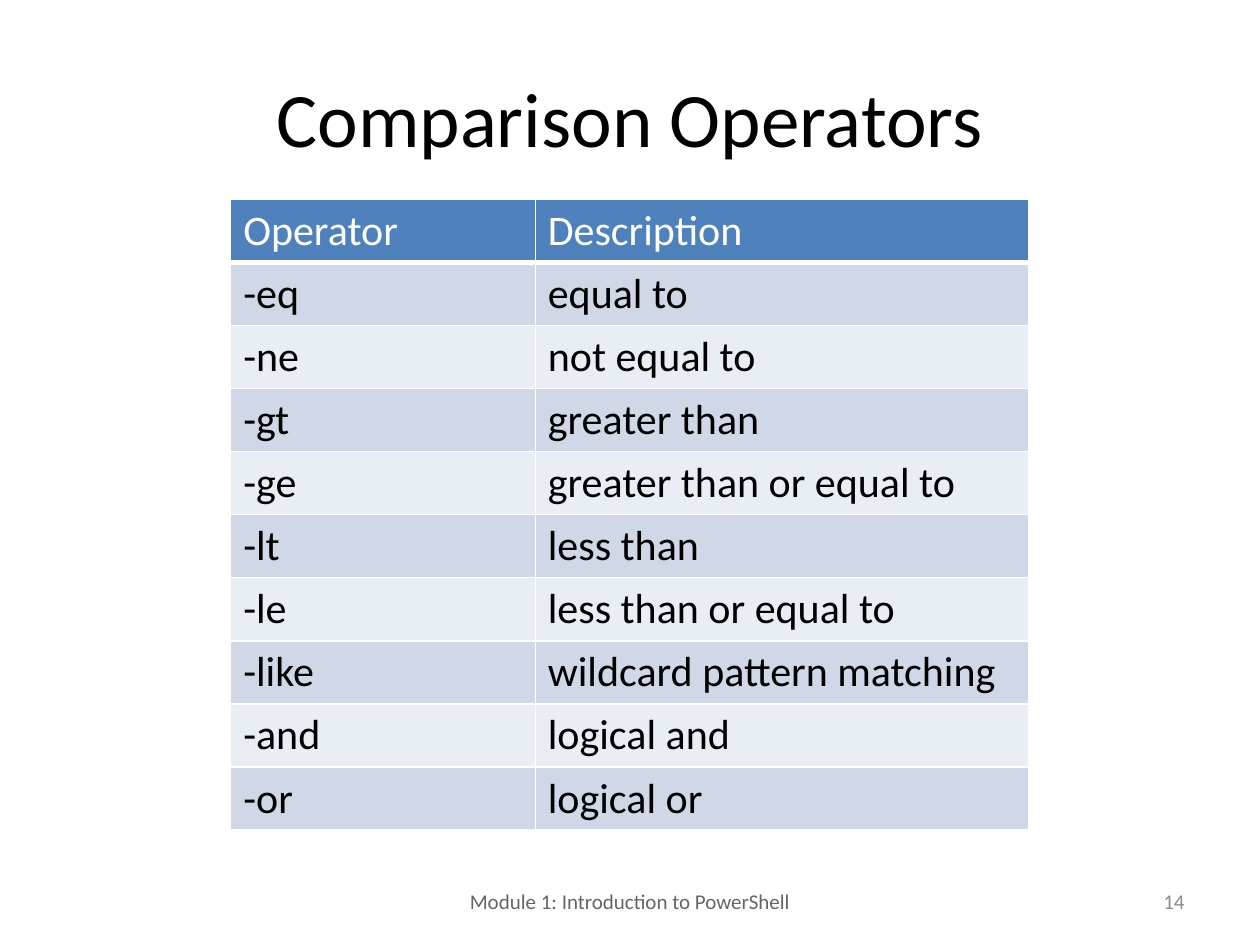
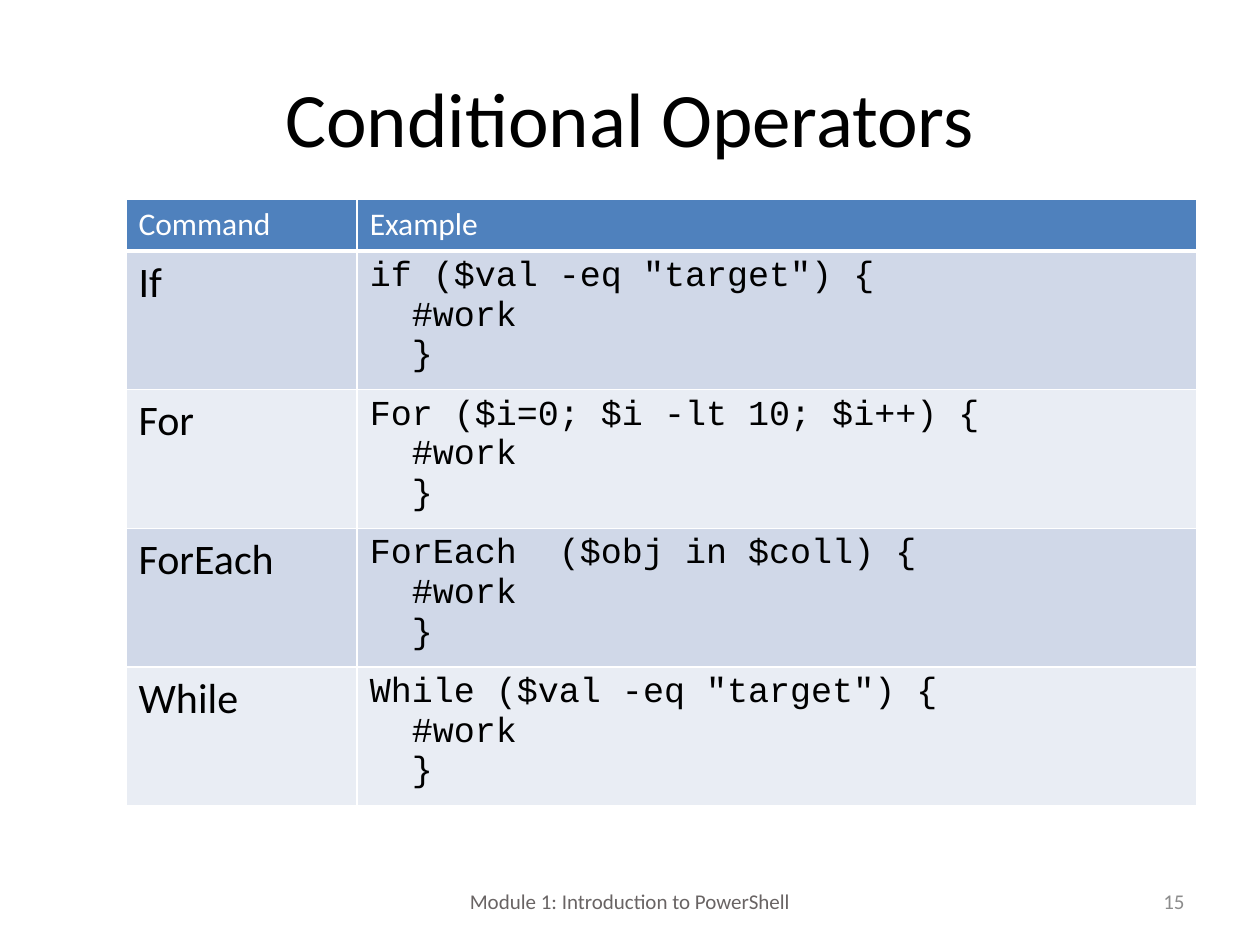
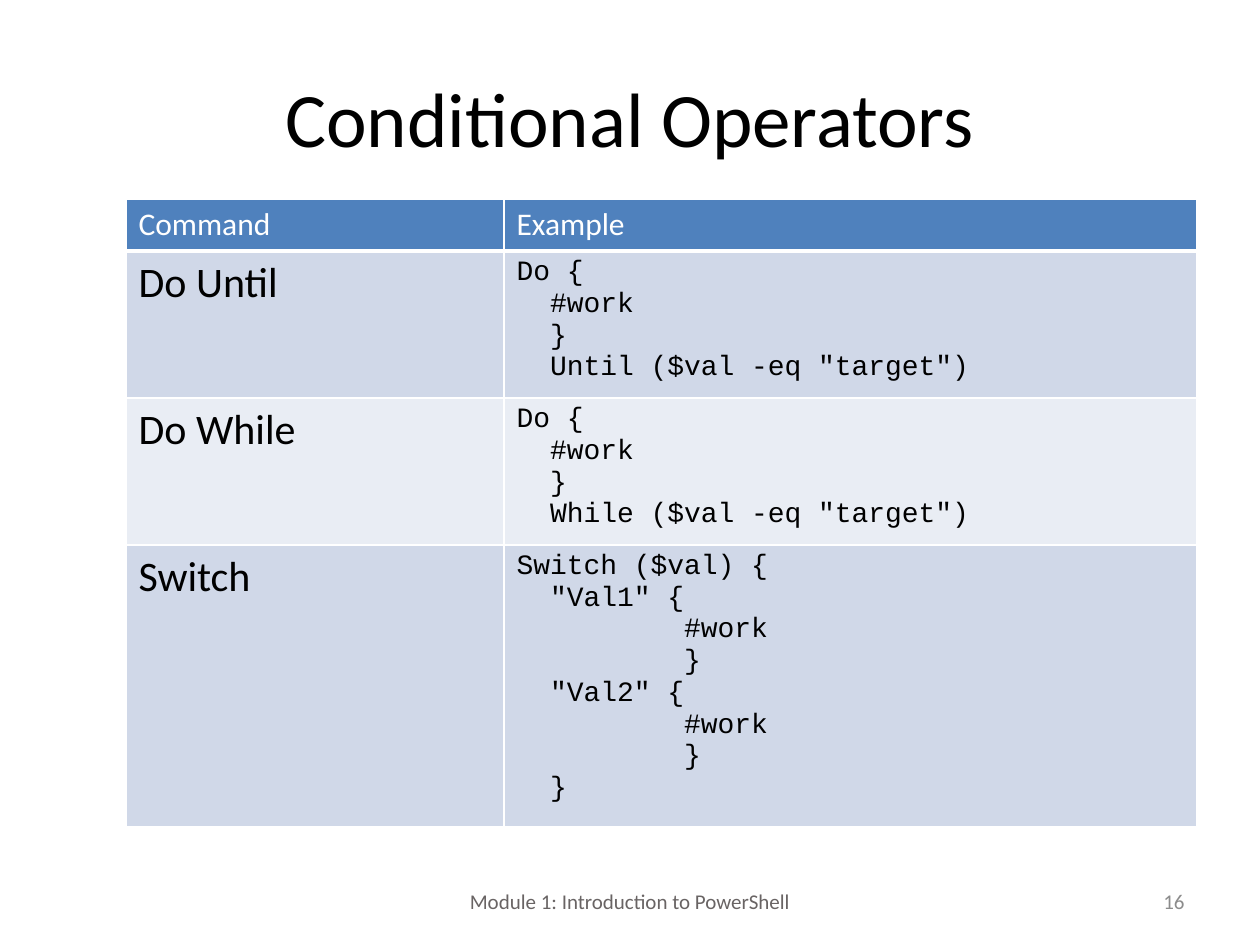
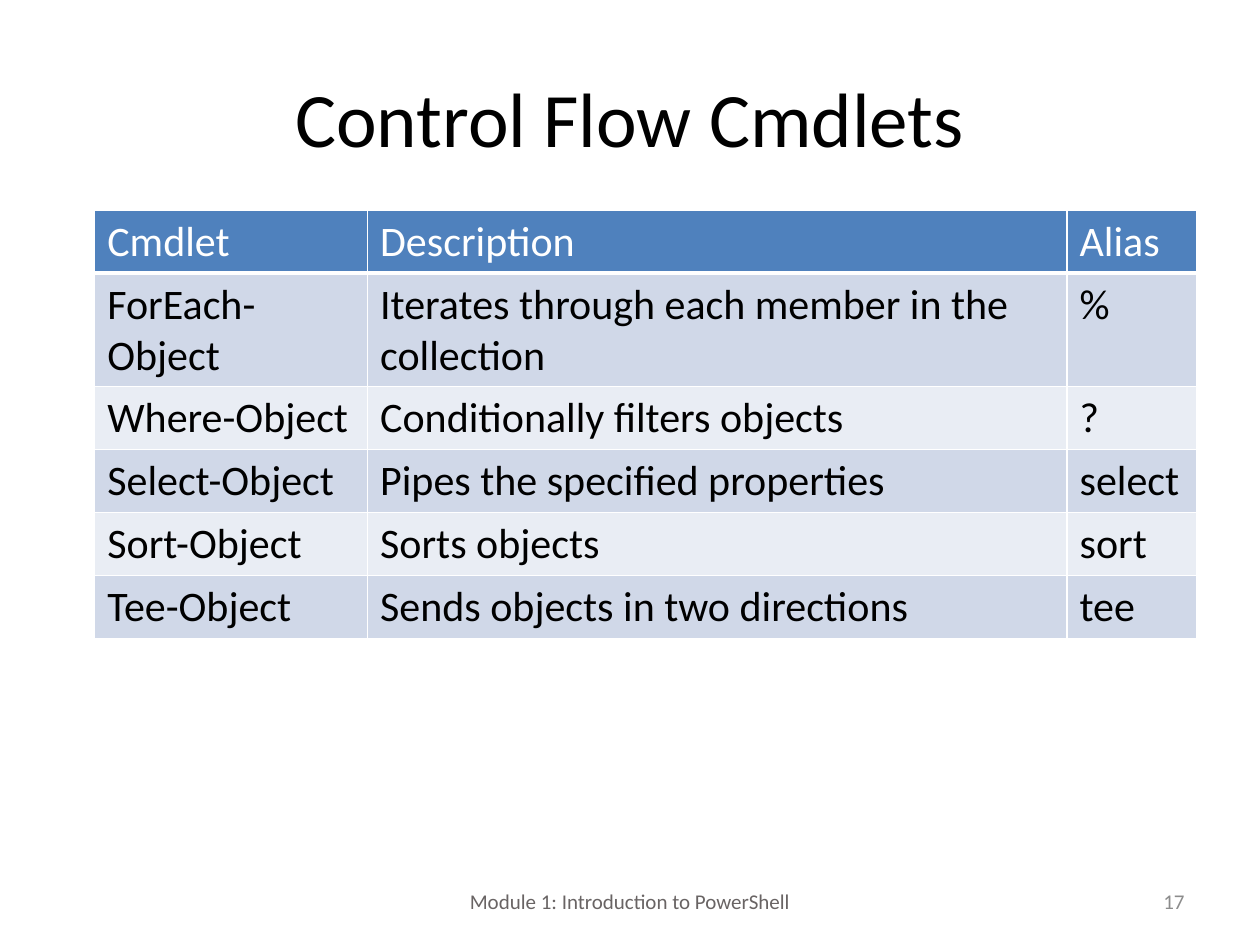
from lxml.etree import SubElement
from pptx import Presentation
from pptx.dml.color import RGBColor as RGB
from pptx.enum.text import MSO_ANCHOR as Anchor, PP_ALIGN as Align
from pptx.oxml.ns import qn
from pptx.util import Cm, Pt

# Shared style
COLORS = {
    "title": "000000", "footer": "696464", "number": "8C8C8C",
    "header": "4F81BD", "header_text": "FFFFFF", "body_text": "000000",
    "band_dark": "D0D8E8", "band_light": "E9EDF4", "border": "FFFFFF",
}
FONT, CODE_FONT = "Calibri", "Courier New"
BODY_SIZE = 24
FOOTER = "Module 1: Introduction to PowerShell"
FIRST_NUMBER = 14
ROW_HEIGHT = 1.04

# Content: sizes in points, positions and column widths in centimetres
SLIDES = [
    {
        "title": "Comparison Operators",
        "at": (4.65, 4.02), "cols": (6.14, 9.95), "header_size": 24,
        "rows": [
            ("Operator", "Description"),
            ("-eq", "equal to"),
            ("-ne", "not equal to"),
            ("-gt", "greater than"),
            ("-ge", "greater than or equal to"),
            ("-lt", "less than"),
            ("-le", "less than or equal to"),
            ("-like", "wildcard pattern matching"),
            ("-and", "logical and"),
            ("-or", "logical or"),
        ],
    },
    {
        "title": "Conditional Operators",
        "at": (2.54, 4.02), "cols": (4.66, 16.93), "header_size": 18,
        "code_size": 20,
        "rows": [
            ("Command", "Example"),
            ("If", 'if ($val -eq "target") {\n  #work\n  }'),
            ("For", "For ($i=0; $i -lt 10; $i++) {\n  #work\n  }"),
            ("ForEach", "ForEach  ($obj in $coll) {\n  #work\n  }"),
            ("While", 'While ($val -eq "target") {\n  #work\n  }'),
        ],
    },
    {
        "title": "Conditional Operators",
        "at": (2.54, 4.02), "cols": (7.62, 13.97), "header_size": 18,
        "code_size": 16,
        "rows": [
            ("Command", "Example"),
            ("Do Until", 'Do {\n  #work\n  }\n  Until ($val -eq "target")'),
            ("Do While", 'Do {\n  #work\n  }\n  While ($val -eq "target")'),
            ("Switch", """Switch ($val) {
  "Val1" {
          #work
          }
  "Val2" {
          #work
          }
  }"""),
        ],
    },
    {
        "title": "Control Flow Cmdlets",
        "at": (1.91, 4.23), "cols": (5.5, 14.1, 2.62), "header_size": 24,
        "rows": [
            ("Cmdlet", "Description", "Alias"),
            ("ForEach-Object", "Iterates through each member in the collection", "%"),
            ("Where-Object", "Conditionally filters objects", "?"),
            ("Select-Object", "Pipes the specified properties", "select"),
            ("Sort-Object", "Sorts objects", "sort"),
            ("Tee-Object", "Sends objects in two directions", "tee"),
        ],
    },
]


def write(tf, text, size, color, font=FONT, align=Align.LEFT):
    tf.text = text
    for p in tf.paragraphs:
        p.alignment = align
        for r in p.runs:
            r.font.name, r.font.size, r.font.bold = font, Pt(size), False
            r.font.color.rgb = RGB.from_string(COLORS[color])


def add_label(s, box, text, size, color, align):
    sp = s.shapes.add_textbox(*map(Cm, box))
    tf = sp.text_frame
    tf.word_wrap = True
    tf.vertical_anchor = Anchor.MIDDLE
    write(tf, text, size, color, align=align)


def set_borders(cell, bottom):
    """Line elements must come before the fill in the cell properties."""
    tc_pr = cell._tc.get_or_add_tcPr()
    for i, (side, width) in enumerate(zip("LRTB", (1, 1, 1, bottom))):
        ln = SubElement(tc_pr, qn(f"a:ln{side}"), w=str(Pt(width)))
        fill = SubElement(ln, qn("a:solidFill"))
        SubElement(fill, qn("a:srgbClr"), val=COLORS["border"])
        tc_pr.insert(i, ln)


def add_grid(s, spec_):
    rows, cols = spec_["rows"], spec_["cols"]
    left, top = spec_["at"]
    table = s.shapes.add_table(len(rows), len(cols), Cm(left), Cm(top),
                               Cm(sum(cols)), Cm(ROW_HEIGHT * len(rows))).table
    for column, width in zip(table.columns, cols):
        column.width = Cm(width)
    for i, row in enumerate(rows):
        for j, text in enumerate(row):
            cell = table.cell(i, j)
            size, font, color = BODY_SIZE, FONT, "body_text"
            band = "band_dark" if i % 2 else "band_light"
            if i == 0:
                size, color, band = spec_["header_size"], "header_text", "header"
            elif j == 1 and "code_size" in spec_:
                size, font = spec_["code_size"], CODE_FONT
            write(cell.text_frame, text, size, color, font)
            cell.fill.solid()
            cell.fill.fore_color.rgb = RGB.from_string(COLORS[band])
            set_borders(cell, bottom=1 if i else 3)


def main():
    prs = Presentation()
    prs.slide_width, prs.slide_height = Cm(25.4), Cm(19.05)
    for number, content in enumerate(SLIDES, FIRST_NUMBER):
        s = prs.slides.add_slide(prs.slide_layouts[6])
        # Title, footer and slide number
        add_label(s, (1.27, 0.76, 22.86, 3.18), content["title"], 44, "title", Align.CENTER)
        add_label(s, (8.68, 17.66, 8.04, 1.01), FOOTER, 12, "footer", Align.CENTER)
        add_label(s, (18.2, 17.66, 5.93, 1.01), str(number), 12, "number", Align.RIGHT)
        # Table
        add_grid(s, content)
    prs.save("out.pptx")


if __name__ == "__main__":
    main()
